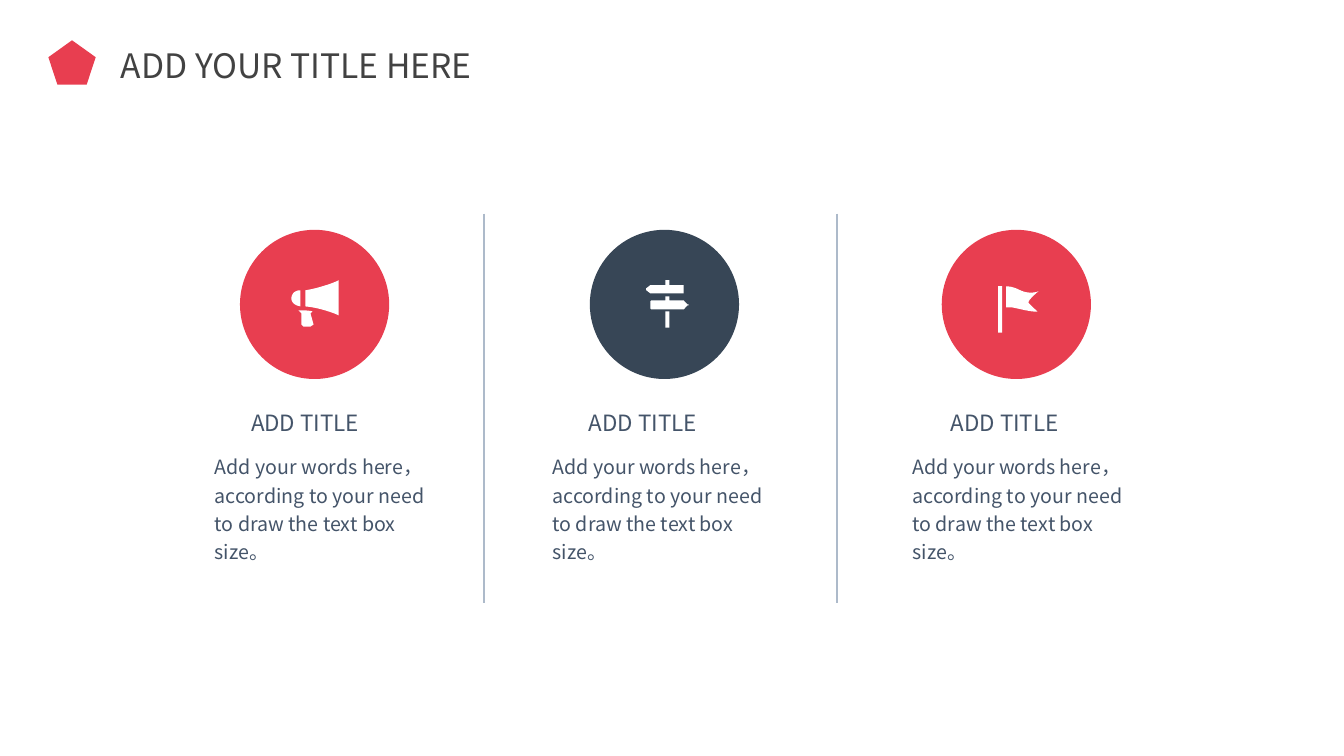
from lxml.etree import SubElement
from pptx import Presentation
from pptx.dml.color import RGBColor
from pptx.enum.shapes import MSO_CONNECTOR, MSO_SHAPE
from pptx.enum.text import MSO_ANCHOR, MSO_AUTO_SIZE, PP_ALIGN
from pptx.oxml.ns import qn
from pptx.util import Inches, Pt

RED = RGBColor(0xE8, 0x3E, 0x50)
NAVY = RGBColor(0x37, 0x46, 0x56)
SLATE = RGBColor(0x44, 0x54, 0x69)
CHARCOAL = RGBColor(0x42, 0x42, 0x42)
RULE = RGBColor(0xAD, 0xBA, 0xCA)
WHITE = RGBColor(0xFF, 0xFF, 0xFF)
FONT = "Noto Sans CJK JP"

DIAMETER = 1.48
CURVE_STEPS = 8
BODY = "Add your words here，according to your need to draw the text box size。"

# Icons, in inches from the corner of their circle: bars are (x, y, w, h);
# outlines hold points (x, y) and Bezier curves (x1, y1, x2, y2, x, y)
MEGAPHONE = {
    "bars": [],
    "outlines": [
        [(.58, .8), (.61, .83), (.61, .94), (.63, .96), (.7, .96), (.73, .94),
         (.7, .83), (.72, .81), (.68, .8, .65, .8, .62, .8)],
        [(.65, .76), (.78, .77, .95, .83, .98, .85), (.98, .5),
         (.95, .52, .78, .58, .65, .6)],
        [(.6, .76), (.6, .6), (.53, .6, .51, .65, .51, .68),
         (.51, .71, .53, .75, .6, .76)],
    ],
}
SIGNPOST = {
    "bars": [(.75, .81, .04, .16)],
    "outlines": [
        [(.75, .55), (.61, .55), (.6, .55), (.56, .58), (.56, .6), (.6, .63),
         (.93, .63), (.93, .55), (.79, .55), (.79, .5), (.75, .5)],
        [(.75, .7), (.61, .7), (.6, .71), (.6, .78), (.61, .79), (.93, .79),
         (.97, .75), (.98, .75), (.98, .74), (.97, .74), (.93, .7),
         (.79, .7), (.79, .66), (.75, .66)],
    ],
}
FLAG = {
    "bars": [(.56, .56, .04, .46)],
    "outlines": [
        [(.86, .72), (.86, .69, .96, .61, .96, .61),
         (.91, .63, .83, .63, .76, .59), (.7, .56, .64, .56, .64, .56),
         (.64, .77), (.64, .77, .66, .77, .7, .77),
         (.76, .78, .9, .82, .95, .81), (.95, .81, .86, .73, .86, .72)],
    ],
}

# Column left edge, then circle and heading offsets from it
COLUMNS = [
    (2.13, .25, .36, RED, MEGAPHONE),
    (5.48, .37, .36, NAVY, SIGNPOST),
    (9.05, .29, .38, RED, FLAG),
]


def paint(sp, color):
    sp.fill.solid()
    sp.fill.fore_color.rgb = color
    sp.line.fill.background()
    sp.shadow.inherit = False


def add_filled(shapes, kind, box, color):
    sp = shapes.add_shape(kind, *map(Inches, box))
    paint(sp, color)


def write(tf, text, size, color, paragraph_format):
    tf.word_wrap = True
    p = tf.paragraphs[0]
    p.alignment = PP_ALIGN.LEFT
    for name, value in paragraph_format.items():
        setattr(p, name, value)
    r = p.add_run()
    r.text = text
    for name, value in {"name": FONT, "size": Pt(size), "bold": False}.items():
        setattr(r.font, name, value)
    r.font.color.rgb = color
    SubElement(r.font._element, qn("a:ea")).set("typeface", FONT)


def add_text(slide, box, text, size, color, **paragraph_format):
    tf = slide.shapes.add_textbox(*map(Inches, box)).text_frame
    for side in ("left", "top", "right", "bottom"):
        setattr(tf, f"margin_{side}", 0)
    write(tf, text, size, color, paragraph_format)


def flatten(outline):
    """Turn an outline's curves into short straight steps."""
    points = [outline[0]]
    for part in outline[1:]:
        if len(part) == 2:
            points.append(part)
            continue
        knots = [points[-1], part[:2], part[2:4], part[4:]]
        for step in range(1, CURVE_STEPS + 1):
            t = step / CURVE_STEPS
            weights = ((1 - t) ** 3, 3 * t * (1 - t) ** 2, 3 * t * t * (1 - t), t ** 3)
            points.append(tuple(sum(w * k[axis] for w, k in zip(weights, knots))
                                for axis in (0, 1)))
    return points


def add_icon(slide, left, top, icon):
    shapes = slide.shapes.add_group_shape().shapes
    for x, y, w, h in icon["bars"]:
        add_filled(shapes, MSO_SHAPE.RECTANGLE, (left + x, top + y, w, h), WHITE)
    for outline in icon["outlines"]:
        points = [(Inches(left + x), Inches(top + y)) for x, y in flatten(outline)]
        builder = shapes.build_freeform(*points[0])
        builder.add_line_segments(points[1:], close=True)
        paint(builder.convert_to_shape(), WHITE)


def add_header(slide, left, top):
    add_filled(slide.shapes, MSO_SHAPE.REGULAR_PENTAGON, (left, top, .47, .44), RED)
    title = slide.shapes.title
    box = {"left": left + .62, "top": top, "width": 4.95, "height": .5}
    for name, value in box.items():
        setattr(title, name, Inches(value))
    tf = title.text_frame
    tf.auto_size = MSO_AUTO_SIZE.NONE
    tf.vertical_anchor = MSO_ANCHOR.MIDDLE
    write(tf, "ADD YOUR TITLE HERE", 24, CHARCOAL, {})


def add_divider(slide, x, top, height):
    line = slide.shapes.add_connector(
        MSO_CONNECTOR.STRAIGHT, Inches(x), Inches(top), Inches(x), Inches(top + height))
    line.line.color.rgb = RULE
    line.line.width = Pt(1)
    SubElement(line._element.spPr, qn("a:effectLst"))


def add_column(slide, left, top, circle_dx, heading_dx, color, icon):
    circle_left = left + circle_dx
    add_filled(slide.shapes, MSO_SHAPE.OVAL,
               (circle_left, top, DIAMETER, DIAMETER), color)
    add_icon(slide, circle_left, top, icon)
    add_text(slide, (left + heading_dx, top + 1.78, 1.42, .27),
             "ADD TITLE", 16, SLATE, space_before=Pt(3.2))
    add_text(slide, (left, top + 2.19, 2.27, .85),
             BODY, 14, SLATE, space_before=Pt(2.8), line_spacing=1.2)


def main():
    prs = Presentation()
    prs.slide_width, prs.slide_height = Inches(13.33), Inches(7.5)
    slide = prs.slides.add_slide(prs.slide_layouts[5])
    add_header(slide, .48, .4)
    # Rules between the columns
    for x in (4.8, 8.3):
        add_divider(slide, x, 2.12, 3.86)
    # Three columns of circle, heading and text
    for left, circle_dx, heading_dx, color, icon in COLUMNS:
        add_column(slide, left, 2.28, circle_dx, heading_dx, color, icon)
    prs.save("out.pptx")


if __name__ == "__main__":
    main()
